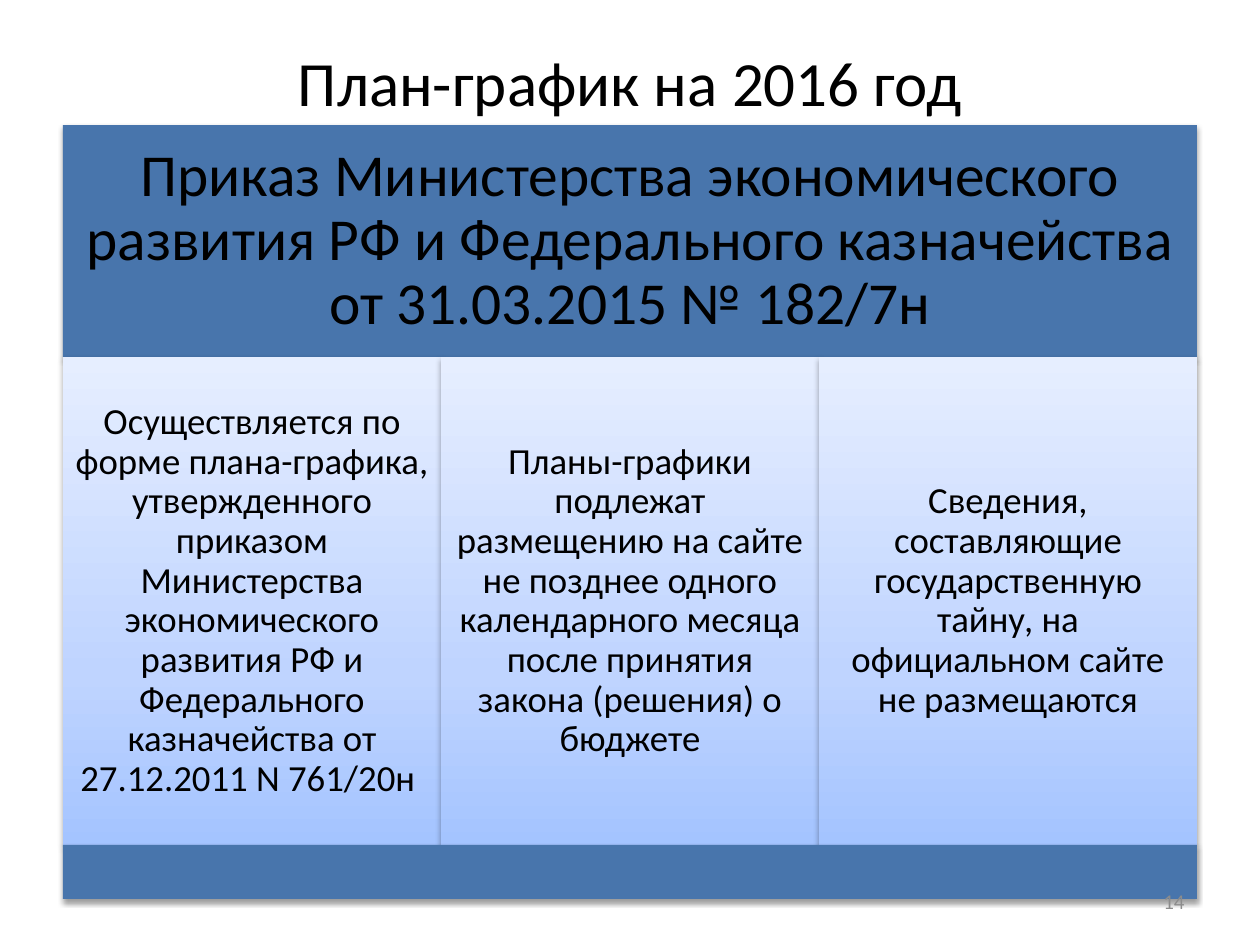
from lxml.etree import SubElement
from pptx import Presentation
from pptx.dml.color import RGBColor
from pptx.enum.shapes import MSO_SHAPE
from pptx.enum.text import MSO_ANCHOR, PP_ALIGN
from pptx.oxml import parse_xml
from pptx.oxml.ns import nsdecls, qn
from pptx.util import Pt

EMU_PER_PX = 914400 / 126
LEFT, WIDTH = 63, 1134
HEADER_TOP, COLUMNS_TOP, FOOTER_TOP, BOTTOM = 125, 357, 845, 899
BLUE, BLACK, GRAY = "4875AC", "000000", "8C8C8C"
GRADIENT = [(0, "A4C4FF"), (35, "BFD4FF"), (100, "E6EEFF")]

HEADER = ("Приказ Министерства экономического развития РФ и Федерального "
          "казначейства от 31.03.2015 № 182/7н")
COLUMNS = [
    "Осуществляется по форме плана-графика, утвержденного приказом "
    "Министерства экономического развития РФ и Федерального казначейства "
    "от 27.12.2011 N 761/20н ",
    "Планы-графики подлежат размещению на сайте не позднее одного "
    "календарного месяца после принятия закона (решения) о бюджете",
    "Сведения, составляющие государственную тайну, на официальном сайте "
    "не размещаются",
]


def px(n):
    return round(n * EMU_PER_PX)


def color(hex_value):
    return RGBColor.from_string(hex_value)


def write(s, text, size, align=PP_ALIGN.CENTER, hex_color=BLACK,
          inset=None, line_spacing=None):
    tf = s.text_frame
    tf.word_wrap = True
    tf.vertical_anchor = MSO_ANCHOR.MIDDLE
    if inset is not None:
        tf.margin_left = tf.margin_right = px(inset)
        tf.margin_top = tf.margin_bottom = px(inset)
    p = tf.paragraphs[0]
    p.alignment = align
    if line_spacing:
        p.line_spacing = line_spacing
    r = p.add_run()
    r.text = text
    r.font.size = Pt(size)
    r.font.name = "Calibri"
    r.font.color.rgb = color(hex_color)


def add_text(slide, box, text, size, **style):
    write(slide.shapes.add_textbox(*map(px, box)), text, size, **style)


def add_shadow(s):
    s.shadow.inherit = False
    effects = s._element.spPr.find(qn("a:effectLst"))
    shadow = SubElement(effects, qn("a:outerShdw"), blurRad=str(Pt(3.1)),
                        dist=str(Pt(1.6)), dir="5400000", rotWithShape="0")
    black = SubElement(shadow, qn("a:srgbClr"), val=BLACK)
    SubElement(black, qn("a:alpha"), val="38000")


def fill_gradient(s):
    """Fill from bottom to top with the GRADIENT stops."""
    stops = "".join(f'<a:gs pos="{pos * 1000}"><a:srgbClr val="{c}"/></a:gs>'
                    for pos, c in GRADIENT)
    fill = parse_xml(f'<a:gradFill {nsdecls("a")} rotWithShape="1">'
                     f'<a:gsLst>{stops}</a:gsLst>'
                     '<a:lin ang="16200000" scaled="0"/></a:gradFill>')
    s._element.spPr.find(qn("a:prstGeom")).addnext(fill)


def add_block(slide, box, fill=None):
    """Add a shadowed rectangle, with the gradient unless a fill is given."""
    s = slide.shapes.add_shape(MSO_SHAPE.RECTANGLE, *map(px, box))
    s.line.fill.background()
    add_shadow(s)
    if fill:
        s.fill.solid()
        s.fill.fore_color.rgb = color(fill)
    else:
        fill_gradient(s)
    return s


def main():
    prs = Presentation()
    prs.slide_width, prs.slide_height = px(1260), px(945)
    slide = prs.slides.add_slide(prs.slide_layouts[6])

    add_text(slide, (LEFT, 38, WIDTH, 87), "План-график на 2016 год", 36)

    header = add_block(
        slide, (LEFT, HEADER_TOP, WIDTH, COLUMNS_TOP - HEADER_TOP), BLUE)
    write(header, HEADER, 34, inset=18, line_spacing=0.9)

    column_width = WIDTH // len(COLUMNS)
    for i, text in enumerate(COLUMNS):
        column = add_block(slide, (LEFT + i * column_width, COLUMNS_TOP,
                                   column_width, FOOTER_TOP - COLUMNS_TOP))
        write(column, text, 21, inset=12, line_spacing=0.9)

    add_block(slide, (LEFT, FOOTER_TOP, WIDTH, BOTTOM - FOOTER_TOP), BLUE)
    add_text(slide, (903, 876, 294, 50), "14", 12,
             align=PP_ALIGN.RIGHT, hex_color=GRAY)
    prs.save("out.pptx")


if __name__ == "__main__":
    main()
